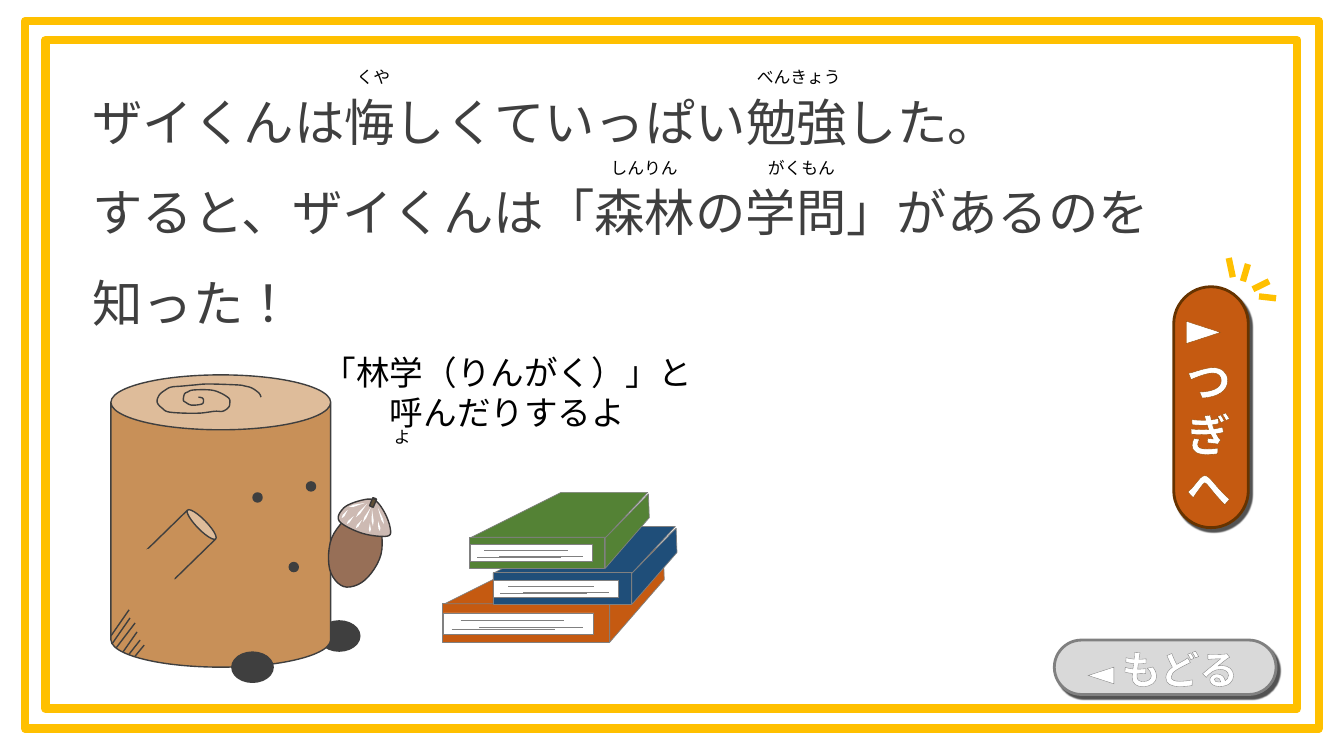
from lxml import etree
from pptx import Presentation
from pptx import util as u
from pptx.dml.color import RGBColor
from pptx.enum import lang, shapes, text
from pptx.oxml import parse_xml
from pptx.oxml.ns import nsdecls, qn

KIND = shapes.MSO_SHAPE
GOLD, INK, WOOD, GREY, WHITE = "FFC000", "3F3F3F", "C89058", "808080", "FFFFFF"
RUST, NUT_EDGE = "C55A11", "3A3838"
HEAVY = "Noto Sans CJK JP"


def colour(code):
    return RGBColor.from_string(code)


def paint(item, fill, line, weight):
    item.shadow.inherit = False
    if fill:
        item.fill.solid()
        item.fill.fore_color.rgb = colour(fill)
    else:
        item.fill.background()
    if line:
        item.line.color.rgb = colour(line)
        item.line.width = u.Pt(weight)
    else:
        item.line.fill.background()
    return item


def add_box(place, kind, left, top, width, height, fill=None, line=None, weight=1, turn=0):
    box = place.add_shape(kind, u.Pt(left), u.Pt(top), u.Pt(width), u.Pt(height))
    box.rotation = turn
    return paint(box, fill, line, weight)


def add_line(place, start, end, line=INK, weight=1):
    stroke = place.add_connector(shapes.MSO_CONNECTOR.STRAIGHT, *map(u.Pt, start + end))
    stroke.line.color.rgb = colour(line)
    stroke.line.width = u.Pt(weight)
    etree.SubElement(stroke._element.spPr, qn("a:effectLst"))


def add_outline(place, points, fill=None, line=None, weight=1, close=True):
    corners = [(u.Pt(x), u.Pt(y)) for x, y in points]
    builder = place.build_freeform(*corners[0])
    builder.add_line_segments(corners[1:], close=close)
    return paint(builder.convert_to_shape(), fill, line, weight)


def smooth(points, close=True, steps=6):
    count = len(points)

    def knot(index):
        return points[index % count if close else min(max(index, 0), count - 1)]

    curve = []
    for index in range(count if close else count - 1):
        quad = [knot(index + shift) for shift in (-1, 0, 1, 2)]
        for step in range(steps):
            t = step / steps
            curve.append(tuple(
                b + t * (c - a) / 2 + t**2 * (2 * a - 5 * b + 4 * c - d) / 2
                + t**3 * (3 * b - a - 3 * c + d) / 2
                for a, b, c, d in zip(*quad)))
    return curve if close else curve + [points[-1]]


def write(para, words, size=12, fill="000000", font="Arial", bold=False, edge=None, weight=1):
    span = para.add_run()
    span.text = words
    span.font.size = u.Pt(size)
    span.font.name = font
    span.font.bold = bold
    span.font.color.rgb = colour(fill)
    span.font.language_id = lang.MSO_LANGUAGE_ID.JAPANESE
    props = span.font._element
    if font == HEAVY:
        etree.SubElement(props, qn("a:ea")).set("typeface", font)
    if edge:
        props.insert(0, parse_xml(
            f'<a:ln {nsdecls("a")} w="{u.Pt(weight)}"><a:solidFill>'
            f'<a:srgbClr val="{edge}"/></a:solidFill></a:ln>'))


def add_text(page, left, top, width, height, lines, align=None, spacing=None, **style):
    box = page.shapes.add_textbox(u.Pt(left), u.Pt(top), u.Pt(width), u.Pt(height))
    frame = box.text_frame
    frame.word_wrap = True
    frame.auto_size = text.MSO_AUTO_SIZE.SHAPE_TO_FIT_TEXT
    for index, words in enumerate(lines):
        para = frame.add_paragraph() if index else frame.paragraphs[0]
        para.alignment = align
        para.line_spacing = spacing
        write(para, words, **style)
    return frame


def add_button(page, left, top, width, height, fill, line, turn=0):
    button = add_box(page.shapes, KIND.ROUNDED_RECTANGLE, left, top, width, height, fill, line, 2, turn)
    button.adjustments[0] = 0.5
    effects = button._element.spPr.find(qn("a:effectLst"))
    effects.append(parse_xml(
        f'<a:outerShdw {nsdecls("a")} blurRad="{u.Pt(1)}" dist="{u.Pt(3)}" dir="3000000" '
        'algn="tl" rotWithShape="0"><a:srgbClr val="000000"><a:alpha val="68000"/>'
        '</a:srgbClr></a:outerShdw>'))


def add_book(place, left, top, scale, cover):
    def at(*points):
        return [(left + x * scale, top + y * scale) for x, y in points]

    edge = dict(line=GREY, weight=0.5)
    add_box(place, KIND.RECTANGLE, left, top, 119 * scale, 27.4 * scale, cover, **edge)
    add_box(place, KIND.RECTANGLE, *at((0.7, 6.5))[0], 107.3 * scale, 15 * scale, WHITE, **edge)
    add_outline(place, at((80.6, -39.6), (157, -39.6), (120.2, 0), (1.4, 0)), cover, **edge)
    add_outline(place, at((157.7, -38.2), (158.4, -17.3), (119.5, 27.4), (119.5, 0.7)), cover, **edge)
    for start, y in ((13, 11.5), (25.9, 16.6), (6.5, 18)):
        add_line(place, *at((start, y), (start + 74.1, y)), **edge)


def add_groove(place, base, tip):
    across, down = tip[0] - base[0], tip[1] - base[1]
    length = (across**2 + down**2) ** 0.5
    x, y = base[0] + 0.3 * across, base[1] + 0.3 * down
    side, rise = -0.75 * down / length, 0.75 * across / length
    add_outline(place, [base, (x + side, y + rise), tip, (x - side, y - rise)], WHITE)


def add_acorn(place):
    nut = [(272.2, 396), (271.1, 372.5), (263.5, 361.4), (250.7, 367),
           (236.9, 384.5), (235.5, 406.6), (245.5, 419), (260.5, 414.5)]
    cap = [(278.6, 376.6), (274.2, 365.2), (267.1, 357.1), (256.6, 357.8),
           (245.5, 362.9), (242.3, 372.2), (258.5, 380.9), (276.7, 383)]
    add_outline(place, smooth(nut), "976F57", NUT_EDGE)
    add_outline(place, smooth(cap), "CDBAB3", NUT_EDGE)
    add_box(place, KIND.CAN, 265, 355.7, 2.9, 6.5, "625138", NUT_EDGE, turn=22.1)
    for base, tip in (
            ((274.3, 374.4), (270, 362.9)), ((271.4, 379.4), (270, 372.2)),
            ((264.2, 380.2), (264.2, 373.7)), ((266.4, 375.8), (265.7, 363.6)),
            ((254.2, 377.3), (258.5, 371.5)), ((259.2, 373), (265, 362.2)),
            ((247.7, 374.4), (252.7, 368.6)), ((254.2, 369.4), (262.1, 360)),
            ((244.1, 370.1), (248.4, 364.3)), ((249.1, 362.2), (260.6, 359.3))):
        add_groove(place, base, tip)


def add_log(place):
    foot, eye = (29.5, 21.6, INK, INK), (6.5, 6.5, INK, INK)
    add_box(place, KIND.OVAL, 227.5, 443.5, *foot)
    add_box(place, KIND.CAN, 79.2, 267.8, 157, 208.8, WOOD, INK)
    for left, top in ((180.7, 352.1), (218.9, 344.2), (206.6, 401.8)):
        add_box(place, KIND.OVAL, left, top, *eye)
    add_box(place, KIND.OVAL, 165.6, 465.8, *foot)
    for start, end in (
            ((92.2, 435.6), (79.2, 454.3)), ((92.9, 441.4), (79.9, 460.1)),
            ((96.5, 445), (82.8, 463)), ((97.9, 451.4), (87.8, 465.8)),
            ((100.1, 457.2), (92.2, 467.3)), ((103, 460.8), (96.5, 468.7))):
        add_line(place, start, end)
    rings = [(141.8, 283.7), (144.7, 284.4), (145.4, 286.6), (144, 288.7), (136.8, 289.4),
             (132.5, 287.3), (131, 285.8), (131.8, 281.5), (133.9, 280.1), (138.2, 278.6),
             (150.5, 278.6), (157.7, 280.8), (163.4, 284.4), (164.2, 287.3), (163.4, 290.9),
             (159.1, 293.8), (153.4, 293.8), (141.1, 295.2), (121.7, 294.5), (115.9, 291.6),
             (112.3, 287.3), (113.8, 282.2), (118.1, 278.6), (122.4, 276.5), (130.3, 275.8),
             (139, 275), (149, 274.3), (169.9, 275), (175, 275.8), (180, 277.2),
             (185, 280.8), (186.5, 283.7)]
    add_outline(place, smooth(rings, close=False), line=INK, close=False)
    add_box(place, KIND.CAN, 115.2, 365, 28.8, 47.5, WOOD, INK, turn=45.7)
    add_box(place, KIND.OVAL, 101.5, 390.2, 21.6, 31, WOOD, turn=142.7)


def main():
    deck = Presentation()
    deck.slide_width, deck.slide_height = u.Pt(960), u.Pt(540)
    page = deck.slides.add_slide(deck.slide_layouts[6])
    center = text.PP_ALIGN.CENTER

    add_box(page.shapes, KIND.RECTANGLE, 18, 15.1, 924, 505.4, line=GOLD, weight=6)
    add_box(page.shapes, KIND.RECTANGLE, 32.4, 28.8, 894.2, 477.4, line=GOLD, weight=6)
    add_text(page, 59, 39.6, 792, 203.8,
             ["ザイくんは悔しくていっぱい勉強した。", "すると、ザイくんは「森林の学問」があるのを知った！"],
             spacing=1.5, size=36, fill=INK)

    books = page.shapes.add_group_shape().shapes
    for left, top, scale, cover in ((316.1, 431.3, 1, RUST), (352.1, 409, 0.83, "1F4E79"),
                                    (335.5, 383.8, 0.81, "548235")):
        add_book(books, left, top, scale, cover)

    character = page.shapes.add_group_shape().shapes
    add_log(character)
    add_acorn(character)

    add_text(page, 192.2, 247.7, 340.6, 65.5, ["「林学（りんがく）」と", "呼んだりするよ"],
             align=center, size=24)
    for reading, left, top, width in (
            ("くや", 247.7, 43.9, 59), ("べんきょう", 533.5, 43.9, 85.7),
            ("しんりん", 429.1, 109.4, 76.3), ("がくもん", 541.4, 109.4, 67.7),
            ("よ", 274.3, 301, 59)):
        add_text(page, left, top, width, 21.6, [reading])

    label = dict(fill=WHITE, font=HEAVY, bold=True)
    add_button(page, 753.1, 457.2, 158.4, 38.9, "D9D9D9", GREY)
    back = add_text(page, 751.7, 457.2, 158.4, 41, ["◄ "], align=center, size=24, edge=GREY, **label)
    write(back.paragraphs[0], "もどる", size=28, edge=GREY, weight=1.5, **label)
    add_button(page, 779, 264.2, 172.1, 53.3, RUST, "663300", turn=270)
    onward = add_text(page, 840.2, 204.5, 52.6, 172.1, ["►つぎへ"], size=32, edge="8E4700", **label)
    onward.vertical_anchor = text.MSO_ANCHOR.MIDDLE
    onward._txBody.bodyPr.set("vert", "wordArtVertRtl")

    sparkle = page.shapes.add_group_shape().shapes
    for start, end in (((877.7, 184.3), (880.6, 198)), ((891.4, 188.6), (887.8, 200.9)),
                       ((911.5, 213.1), (899.3, 211.7)), ((906.5, 200.9), (895, 206.6))):
        add_line(sparkle, start, end, GOLD, 4.5)

    deck.save("out.pptx")


if __name__ == "__main__":
    main()
